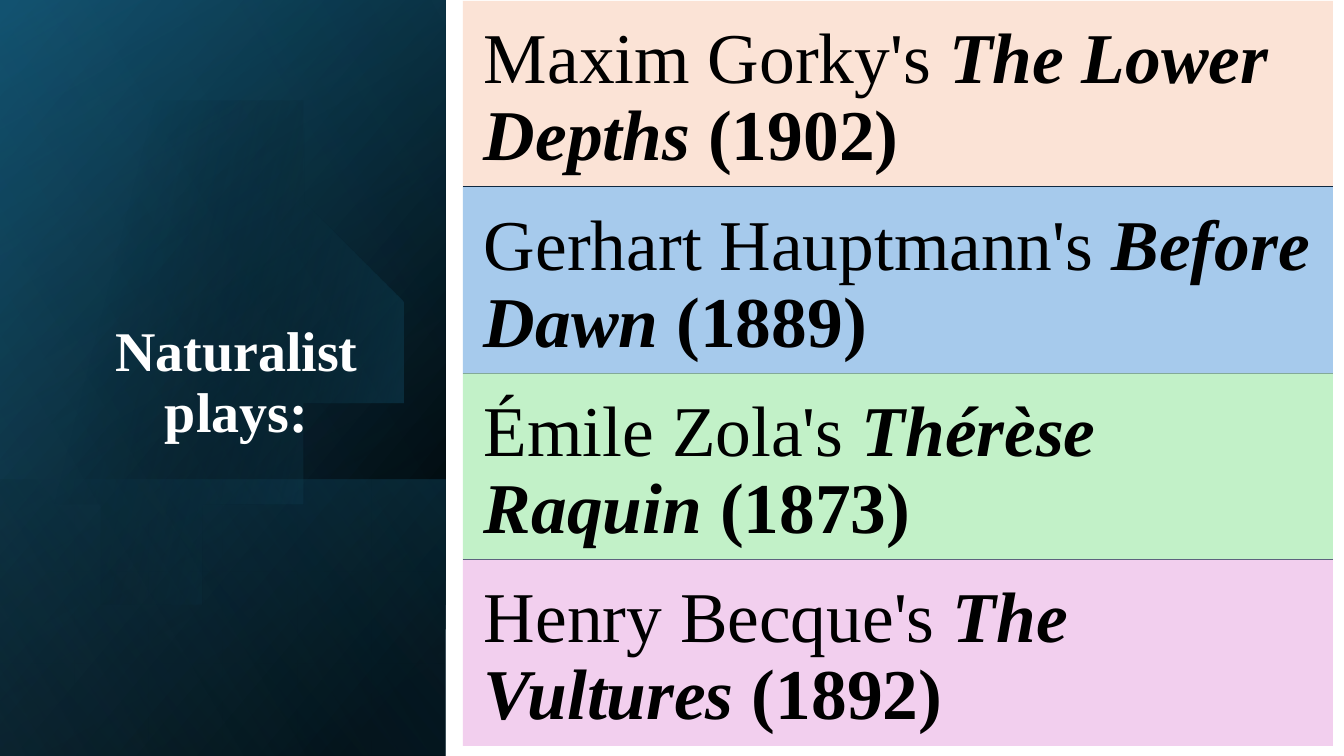
import pptx
import pptx.dml.color
import pptx.enum.shapes
import pptx.enum.text
import pptx.oxml
import pptx.oxml.ns
import pptx.util
from lxml import etree

# Content
TITLE = "Naturalist plays:"
PLAYS = [
    ("Maxim Gorky's", "The Lower Depths", "(1902)", "peach"),
    ("Gerhart Hauptmann's", "Before Dawn", "(1889)", "sky"),
    ("Émile Zola's", "Thérèse Raquin", "(1873)", "mint"),
    ("Henry Becque's", "The Vultures", "(1892)", "pink"),
]
COLORS = {
    "peach": "FBE3D6", "sky": "A6CAEC", "mint": "C2F1C8", "pink": "F2CFEE",
    "black": "000000", "white": "FFFFFF", "rule": "0E2841",
    "deep": "104862", "teal": "156082", "bright": "46B1E1",
}
FONT = "Times New Roman"
NBSP = chr(160)

# Layout in inches
SLIDE_WIDTH, SLIDE_HEIGHT = 13.33, 7.5
PANEL_WIDTH = 4.42
LIST_LEFT, LIST_TOP, LIST_WIDTH, ROW_HEIGHT = 4.59, 0.01, 8.63, 1.85
ROW_PITCH = 1.847
TITLE_BOX = (0.64, 1.84, 3.41, 2.62)

# Panel layers: top, height, angle, stops of (position, colour, opacity)
BASE = (0, SLIDE_HEIGHT, 50, [(8, "black", 100), (100, "deep", 100)])
TINT = (0, SLIDE_HEIGHT, 30, [(0, "black", 0), (99, "teal", 46)])
FOOT = (4.76, 2.74, 130, [(2, "teal", 29), (100, "black", 30)])
GLOW = (0, SLIDE_HEIGHT, 120, [(0, "black", 0), (99, "bright", 11)])

# Disc outline: start point, then cubic curves or straight points
DISC_START = (1.49, 1.1)
DISC_PARTS = [
    [(2.46, 1.12), (3.35, 1.77), (3.63, 2.75)],
    [(3.98, 3.97), (3.28, 5.23), (2.07, 5.58)],
    [(1.31, 5.8), (0.53, 5.61), (-0.03, 5.14)],
    [(-0.15, 5.03)],
    [(-0.15, 1.75)],
    [(0, 1.61)],
    [(0.23, 1.42), (0.5, 1.28), (0.8, 1.19)],
    [(1.03, 1.13), (1.26, 1.1), DISC_START],
]
DISC_ANGLE, DISC_STOPS = 14, [(29, "black", 0), (100, "teal", 43)]
CURVE_STEPS = 24


def inches(*values):
    return [pptx.util.Inches(value) for value in values]


def rgb(name):
    return pptx.dml.color.RGBColor.from_string(COLORS[name])


def set_values(target, values):
    for name, value in values.items():
        setattr(target, name, value)


def fill_gradient(shape, angle, stops):
    shape.shadow.inherit = False
    shape.line.fill.background()
    shape.fill.gradient()
    gradient = shape._element.spPr.find(pptx.oxml.ns.qn("a:gradFill"))
    for child in list(gradient):
        gradient.remove(child)
    gradient.set("rotWithShape", "1")

    def add(parent, tag, **attributes):
        return etree.SubElement(parent, pptx.oxml.ns.qn(tag), attributes)

    stop_list = add(gradient, "a:gsLst")
    for position, color, opacity in stops:
        stop = add(stop_list, "a:gs", pos=str(position * 1000))
        value = add(stop, "a:srgbClr", val=COLORS[color])
        if opacity < 100:
            add(value, "a:alpha", val=str(opacity * 1000))
    add(gradient, "a:lin", ang=str(angle * 60000), scaled="0")


def add_panel_layer(slide, top, height, angle, stops):
    # A quarter turn swaps the sides about the centre
    left = (PANEL_WIDTH - height) / 2
    shape = slide.shapes.add_shape(
        pptx.enum.shapes.MSO_SHAPE.RECTANGLE,
        *inches(left, top + (height - PANEL_WIDTH) / 2, height, PANEL_WIDTH))
    shape.rotation = 90
    shape._element.spPr.xfrm.set("flipH", "1")
    fill_gradient(shape, angle, stops)


def disc_points():
    current, points = DISC_START, []
    for part in DISC_PARTS:
        if len(part) == 3:
            corners = [current, *part]
            for step in range(1, CURVE_STEPS + 1):
                t = step / CURVE_STEPS
                weights = ((1 - t) ** 3, 3 * t * (1 - t) ** 2,
                           3 * t * t * (1 - t), t ** 3)
                points.append(tuple(
                    sum(weight * corner[axis] for weight, corner in zip(weights, corners))
                    for axis in (0, 1)))
        else:
            points.extend(part)
        current = part[-1]
    return points


def add_disc(slide):
    builder = slide.shapes.build_freeform(*DISC_START, scale=pptx.util.Inches(1))
    builder.add_line_segments(disc_points(), close=True)
    fill_gradient(builder.convert_to_shape(), DISC_ANGLE, DISC_STOPS)


def add_run(paragraph, text, color, **font_values):
    run = paragraph.add_run()
    run.text = text
    set_values(run.font, {"name": FONT, **font_values})
    run.font.color.rgb = rgb(color)


def add_title(slide):
    title = slide.shapes.title
    slide.shapes._spTree.append(title._element)  # bring above the panel
    set_values(title, dict(zip(("left", "top", "width", "height"), inches(*TITLE_BOX))))
    set_values(title.text_frame, {
        "word_wrap": True,
        "auto_size": pptx.enum.text.MSO_AUTO_SIZE.NONE,
        "vertical_anchor": pptx.enum.text.MSO_ANCHOR.BOTTOM})
    paragraph = title.text_frame.paragraphs[0]
    set_values(paragraph, {"alignment": pptx.enum.text.PP_ALIGN.CENTER, "line_spacing": 0.9})
    add_run(paragraph, TITLE, "white", size=pptx.util.Pt(40), bold=True)


def add_rule(slide, top):
    rule = slide.shapes.add_connector(
        pptx.enum.shapes.MSO_CONNECTOR.STRAIGHT,
        *inches(LIST_LEFT, top, LIST_LEFT + LIST_WIDTH, top))
    rule.line.color.rgb = rgb("rule")
    rule.line.width = pptx.util.Pt(1)
    etree.SubElement(rule._element.spPr, pptx.oxml.ns.qn("a:effectLst"))


def add_play(slide, top, author, play, year, color):
    row = slide.shapes.add_shape(
        pptx.enum.shapes.MSO_SHAPE.RECTANGLE,
        *inches(LIST_LEFT, top, LIST_WIDTH, ROW_HEIGHT))
    row.shadow.inherit = False
    row.fill.solid()
    row.fill.fore_color.rgb = rgb(color)
    row.line.fill.background()
    margin = pptx.util.Inches(0.21)
    set_values(row.text_frame, {
        "word_wrap": True, "vertical_anchor": pptx.enum.text.MSO_ANCHOR.TOP,
        "margin_left": margin, "margin_right": margin,
        "margin_top": margin, "margin_bottom": margin})
    paragraph = row.text_frame.paragraphs[0]
    set_values(paragraph, {"alignment": pptx.enum.text.PP_ALIGN.LEFT, "line_spacing": 0.9})
    size = pptx.util.Pt(51)
    add_run(paragraph, author + NBSP, "black", size=size)
    add_run(paragraph, play, "black", size=size, bold=True, italic=True)
    add_run(paragraph, NBSP + year, "black", size=size, bold=True)


def main():
    presentation = pptx.Presentation()
    presentation.slide_width, presentation.slide_height = inches(SLIDE_WIDTH, SLIDE_HEIGHT)
    slide = presentation.slides.add_slide(presentation.slide_layouts[5])

    # Left panel
    for layer in (BASE, TINT, FOOT):
        add_panel_layer(slide, *layer)
    add_disc(slide)
    add_panel_layer(slide, *GLOW)
    add_title(slide)

    # List of plays
    for index, play in enumerate(PLAYS):
        top = LIST_TOP + index * ROW_PITCH
        if index:
            add_rule(slide, top)
        add_play(slide, top, *play)

    presentation.save("out.pptx")


if __name__ == "__main__":
    main()
